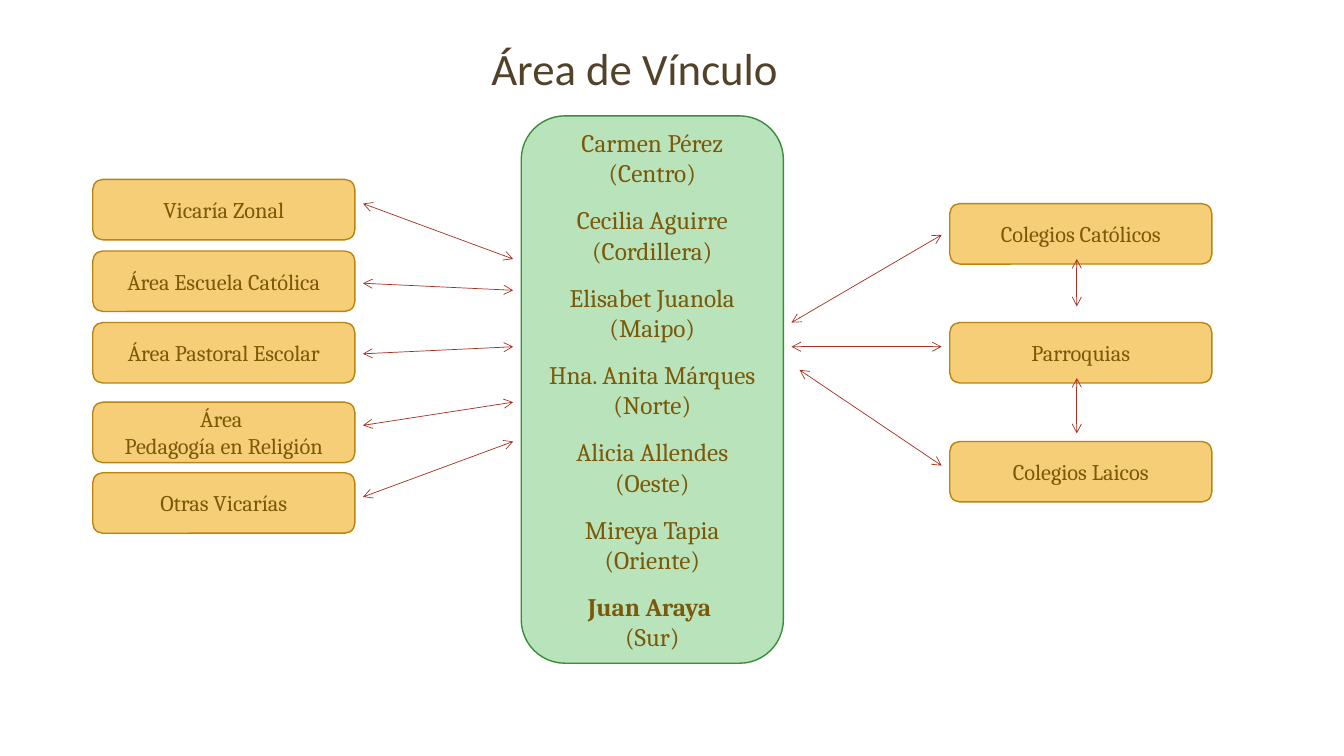
import pptx
import pptx.dml.color
import pptx.enum.shapes
import pptx.enum.text
import pptx.oxml
import pptx.oxml.ns
import pptx.util

RGBColor = pptx.dml.color.RGBColor
TITLE_BROWN = RGBColor(0x53, 0x42, 0x2A)
TEXT_BROWN = RGBColor(0x7C, 0x58, 0x09)
AMBER = RGBColor(0xF5, 0xCE, 0x77)
AMBER_EDGE = RGBColor(0xBA, 0x85, 0x0E)
GREEN = RGBColor(0xB9, 0xE3, 0xBA)
GREEN_EDGE = RGBColor(0x39, 0x8D, 0x3B)
ARROW_RED = RGBColor(0xA6, 0x31, 0x21)

PX = 9144  # 100 px to the inch
ANCHOR = pptx.enum.text.MSO_ANCHOR
CENTER = pptx.enum.text.PP_ALIGN.CENTER
ROUNDED = pptx.enum.shapes.MSO_SHAPE.ROUNDED_RECTANGLE
STRAIGHT = pptx.enum.shapes.MSO_CONNECTOR.STRAIGHT

presentation = pptx.Presentation()
presentation.slide_width = 1333 * PX
presentation.slide_height = 750 * PX
slide = presentation.slides.add_slide(presentation.slide_layouts[6])


def write_lines(frame, lines, size, font_name, color, anchor):
    """Write centred paragraphs from (text, bold, space after) rows."""
    frame.word_wrap = True
    frame.vertical_anchor = anchor
    for index, (text, bold, space_after) in enumerate(lines):
        paragraph = frame.paragraphs[0] if index == 0 else frame.add_paragraph()
        paragraph.alignment = CENTER
        paragraph.space_after = pptx.util.Pt(space_after)
        run = paragraph.add_run()
        run.text = text
        font_format = {"name": font_name, "size": pptx.util.Pt(size), "bold": bold}
        for attribute, value in font_format.items():
            setattr(run.font, attribute, value)
        run.font.color.rgb = color


def add_panel(left, top, height, fill, edge, lines, size):
    panel = slide.shapes.add_shape(
        ROUNDED, left * PX, top * PX, 260 * PX, height * PX)
    panel.shadow.inherit = False
    panel.fill.solid()
    panel.fill.fore_color.rgb = fill
    panel.line.color.rgb = edge
    panel.line.width = pptx.util.Pt(1)
    write_lines(panel.text_frame, lines, size, "Cambria", TEXT_BROWN, ANCHOR.MIDDLE)


# Title
title = slide.shapes.add_textbox(92 * PX, 40 * PX, 1075 * PX, 59 * PX)
write_lines(title.text_frame, [("Área de Vínculo", False, 0)],
            32, "Calibri", TITLE_BROWN, ANCHOR.BOTTOM)
title.text_frame.paragraphs[0].line_spacing = 0.9

# Areas on the left, schools and parishes on the right
columns = {
    92: [
        (178, ["Vicaría Zonal"]),
        (249, ["Área Escuela Católica"]),
        (320, ["Área Pastoral Escolar"]),
        (399, ["Área ", "Pedagogía en Religión"]),
        (469, ["Otras Vicarías"]),
    ],
    942: [
        (202, ["Colegios Católicos"]),
        (320, ["Parroquias"]),
        (438, ["Colegios Laicos"]),
    ],
}
for left, entries in columns.items():
    for top, labels in entries:
        add_panel(left, top, 60, AMBER, AMBER_EDGE,
                  [(label, False, 0) for label in labels], 16)

# Zone coordinators in the centre
coordinators = [
    ("Carmen Pérez (Centro)", False, 12),
    ("Cecilia Aguirre (Cordillera)", False, 12),
    ("Elisabet Juanola (Maipo)", False, 12),
    ("Hna. Anita Márques (Norte)", False, 12),
    ("Alicia Allendes (Oeste)", False, 12),
    ("Mireya Tapia (Oriente)", False, 12),
    ("Juan Araya ", True, 0),
    ("(Sur)", False, 12),
]
add_panel(517, 115, 543, GREEN, GREEN_EDGE, coordinators, 18)

# Two-way links: left areas to centre, right column to centre, right column
left_links = [(360, start, 509, end) for start, end in
              [(202, 257), (281, 288), (351, 344), (422, 399), (493, 438)]]
right_links = [(934, 233, 785, 320), (934, 344, 785, 344), (934, 462, 793, 367)]
vertical_links = [(1068, 257, 1068, 304), (1068, 375, 1068, 430)]
for ends in left_links + right_links + vertical_links:
    link = slide.shapes.add_connector(STRAIGHT, *[end * PX for end in ends])
    link.line.color.rgb = ARROW_RED
    link.line.width = pptx.util.Pt(0.5)
    outline = link.line._get_or_add_ln()
    for tag in ("a:headEnd", "a:tailEnd"):
        arrowhead = pptx.oxml.xmlchemy.OxmlElement(tag)
        arrowhead.set("type", "arrow")
        outline.append(arrowhead)
    outline.getparent().append(pptx.oxml.xmlchemy.OxmlElement("a:effectLst"))

presentation.save("out.pptx")
